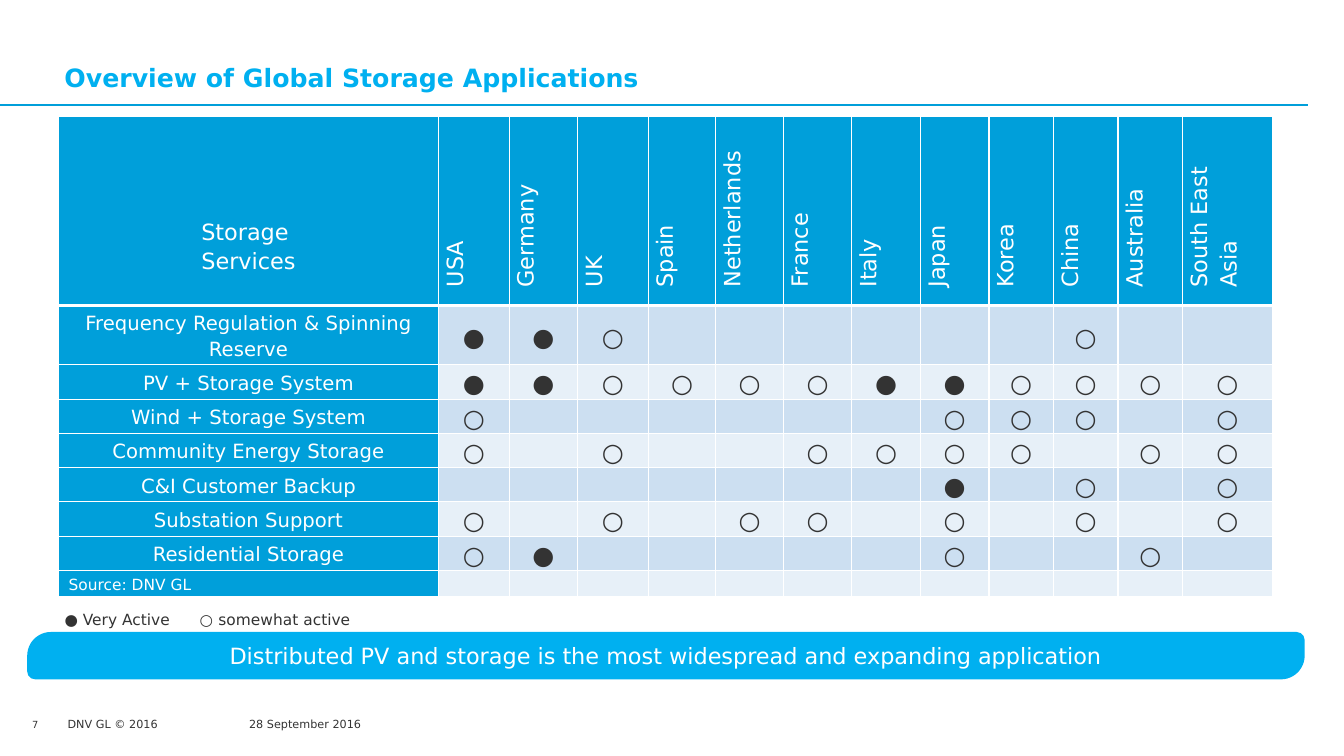
from lxml.etree import SubElement
from pptx import Presentation
from pptx.dml.color import RGBColor
from pptx.enum.shapes import MSO_CONNECTOR, MSO_SHAPE
from pptx.enum.text import MSO_ANCHOR, PP_ALIGN
from pptx.oxml.ns import qn
from pptx.util import Pt

PX = 9144  # 100 px to the inch
FONT = "DejaVu Sans"
WHITE = RGBColor(0xFF, 0xFF, 0xFF)
INK = RGBColor(0x33, 0x33, 0x33)
SKY = RGBColor(0x00, 0xB0, 0xF0)
BLUE = RGBColor(0x00, 0x9F, 0xDA)
BANDS = (RGBColor(0xCC, 0xDF, 0xF1), RGBColor(0xE7, 0xF0, 0xF8))

COUNTRIES = ["USA", "Germany", "UK", "Spain", "Netherlands", "France", "Italy",
             "Japan", "Korea", "China", "Australia", "South East Asia"]
COLUMN_WIDTHS = [377, 70, 68, 70, 67, 67, 68, 68, 68, 64, 64, 64, 89]
ROW_HEIGHTS = [188, 59] + [34] * 6 + [26]
# One mark per country: ● very active, ○ somewhat active, - none
SERVICES = [
    ("Frequency Regulation & Spinning Reserve", "●●○------○--"),
    ("PV + Storage System", "●●○○○○●●○○○○"),
    ("Wind + Storage System", "○------○○○-○"),
    ("Community Energy Storage", "○-○--○○○○-○○"),
    ("C&I Customer Backup", "-------●-○-○"),
    ("Substation Support", "○-○-○○-○-○-○"),
    ("Residential Storage", "○●-----○--○-"),
    ("Source: DNV GL", "-" * 12),
]


def px(*lengths):
    return [length * PX for length in lengths]


def style(font, size, color, bold=False):
    font.name, font.size, font.bold = FONT, Pt(size), bold
    font.color.rgb = color


def set_margins(target, left, top, right, bottom):
    target.margin_left, target.margin_top, target.margin_right, target.margin_bottom = px(
        left, top, right, bottom)


def add_label(slide, box, text, size, margins=(0, 0, 0, 0), wrap=True):
    frame = slide.shapes.add_textbox(*px(*box)).text_frame
    frame.word_wrap = wrap
    set_margins(frame, *margins)
    paragraph = frame.paragraphs[0]
    paragraph.text = text
    style(paragraph.font, size, INK)


def add_panel(slide, box, preset, fill, text, size, color, bold=False):
    shape = slide.shapes.add_shape(preset, *px(*box))
    shape.shadow.inherit = False
    shape.fill.solid()
    shape.fill.fore_color.rgb = fill
    shape.line.fill.background()
    paragraph = shape.text_frame.paragraphs[0]
    paragraph.text = text
    style(paragraph.font, size, color, bold)
    return shape


def add_title(slide, box):
    title = add_panel(slide, box, MSO_SHAPE.RECTANGLE, WHITE,
                      "Overview of Global Storage Applications", 18, SKY, True)
    set_margins(title.text_frame, 6, 0, 6, 0)
    title.text_frame.vertical_anchor = MSO_ANCHOR.BOTTOM
    title.text_frame.paragraphs[0].alignment = PP_ALIGN.LEFT
    # Rule below the title
    rule_y = box[1] + box[3] + 12
    rule = slide.shapes.add_connector(MSO_CONNECTOR.STRAIGHT, *px(0, rule_y, 1297, rule_y))
    rule.line.color.rgb = BLUE
    rule.line.width = Pt(1.25)
    SubElement(rule._element.spPr, qn("a:effectLst"))


def set_borders(cell, top=1, bottom=1):
    properties = cell._tc.get_or_add_tcPr()
    widths = {"a:lnL": 1, "a:lnR": 1, "a:lnT": top, "a:lnB": bottom}
    for index, (tag, width) in enumerate(widths.items()):
        line = properties.makeelement(qn(tag), {"w": str(Pt(width))})
        fill = SubElement(line, qn("a:solidFill"))
        SubElement(fill, qn("a:srgbClr"), val=str(WHITE))
        properties.insert(index, line)


def fill_cell(cell, text, size, color, fill, alignment=PP_ALIGN.CENTER):
    cell.fill.solid()
    cell.fill.fore_color.rgb = fill
    set_margins(cell, 10, 0, 10, 0)
    cell.vertical_anchor = MSO_ANCHOR.MIDDLE
    cell.text = text
    for paragraph in cell.text_frame.paragraphs:
        paragraph.alignment = alignment
        paragraph.line_spacing = 1.15
        style(paragraph.font, size, color)
        if not text:
            SubElement(paragraph._p, qn("a:endParaRPr"), sz=str(size * 100))


def add_applications_table(slide, left, top):
    size = px(sum(COLUMN_WIDTHS), sum(ROW_HEIGHTS))
    table = slide.shapes.add_table(len(ROW_HEIGHTS), len(COLUMN_WIDTHS),
                                   *px(left, top), *size).table
    for column, width in zip(table.columns, COLUMN_WIDTHS):
        column.width = width * PX
    for row, height in zip(table.rows, ROW_HEIGHTS):
        row.height = height * PX

    # Header row
    corner = table.cell(0, 0)
    fill_cell(corner, "Storage \nServices", 16, WHITE, BLUE)
    corner.vertical_anchor = MSO_ANCHOR.BOTTOM
    corner.margin_bottom = 30 * PX
    set_borders(corner, bottom=3)
    for column, country in enumerate(COUNTRIES, 1):
        cell = table.cell(0, column)
        fill_cell(cell, country, 16, WHITE, BLUE, PP_ALIGN.LEFT)
        cell.vertical_anchor = MSO_ANCHOR.TOP
        cell._tc.get_or_add_tcPr().set("vert", "vert270")
        cell.text_frame.paragraphs[0]._p.get_or_add_pPr().set("marL", str(8 * PX))
        set_borders(cell, bottom=3)

    # Services and their marks
    for row, (service, marks) in enumerate(SERVICES, 1):
        is_source = row == len(SERVICES)
        top_border = 3 if row == 1 else 1
        name = table.cell(row, 0)
        fill_cell(name, service, 11 if is_source else 14, WHITE, BLUE,
                  PP_ALIGN.LEFT if is_source else PP_ALIGN.CENTER)
        set_borders(name, top=top_border)
        for column, mark in enumerate(marks, 1):
            cell = table.cell(row, column)
            fill_cell(cell, mark.strip("-"), 11 if mark == "-" else 18, INK,
                      BANDS[(row - 1) % 2])
            set_borders(cell, top=top_border)


def add_legend(slide, box):
    frame = slide.shapes.add_textbox(*px(*box)).text_frame
    frame.word_wrap = True
    set_margins(frame, 0, 0, 0, 0)
    paragraph = frame.paragraphs[0]
    paragraph.line_spacing = 1.13
    tabs = SubElement(paragraph._p.get_or_add_pPr(), qn("a:tabLst"))
    SubElement(tabs, qn("a:tab"), pos=str(134 * PX), algn="l")
    for text, bold in (("●", True), (" Very Active\t", False),
                       ("○ ", True), ("somewhat active", False)):
        run = paragraph.add_run()
        run.text = text
        style(run.font, 11, INK, bold)


def add_takeaway(slide, box):
    banner = add_panel(slide, box, MSO_SHAPE.ROUND_2_DIAG_RECTANGLE, SKY,
                       "Distributed PV and storage is the most widespread and expanding application",
                       16, WHITE)
    banner.adjustments[0], banner.adjustments[1] = 0.5, 0.17
    banner.text_frame.vertical_anchor = MSO_ANCHOR.MIDDLE
    banner.text_frame.paragraphs[0].alignment = PP_ALIGN.CENTER


def add_footer(slide, left, top):
    add_label(slide, (left, top - 4, 58, 20), "7", 7, (10, 5, 10, 5))
    add_label(slide, (left + 45, top, 92, 13), "DNV GL © 2016", 8, wrap=False)
    add_label(slide, (left + 225, top, 409, 20), "28 September 2016", 8)


def main():
    presentation = Presentation()
    presentation.slide_width, presentation.slide_height = px(1333, 750)
    slide = presentation.slides.add_slide(presentation.slide_layouts[6])
    add_title(slide, (58, 28, 1260, 64))
    add_applications_table(slide, 58, 115)
    add_legend(slide, (64, 603, 406, 21))
    add_takeaway(slide, (27, 627, 1267, 47))
    add_footer(slide, 22, 712)
    presentation.save("out.pptx")


if __name__ == "__main__":
    main()
